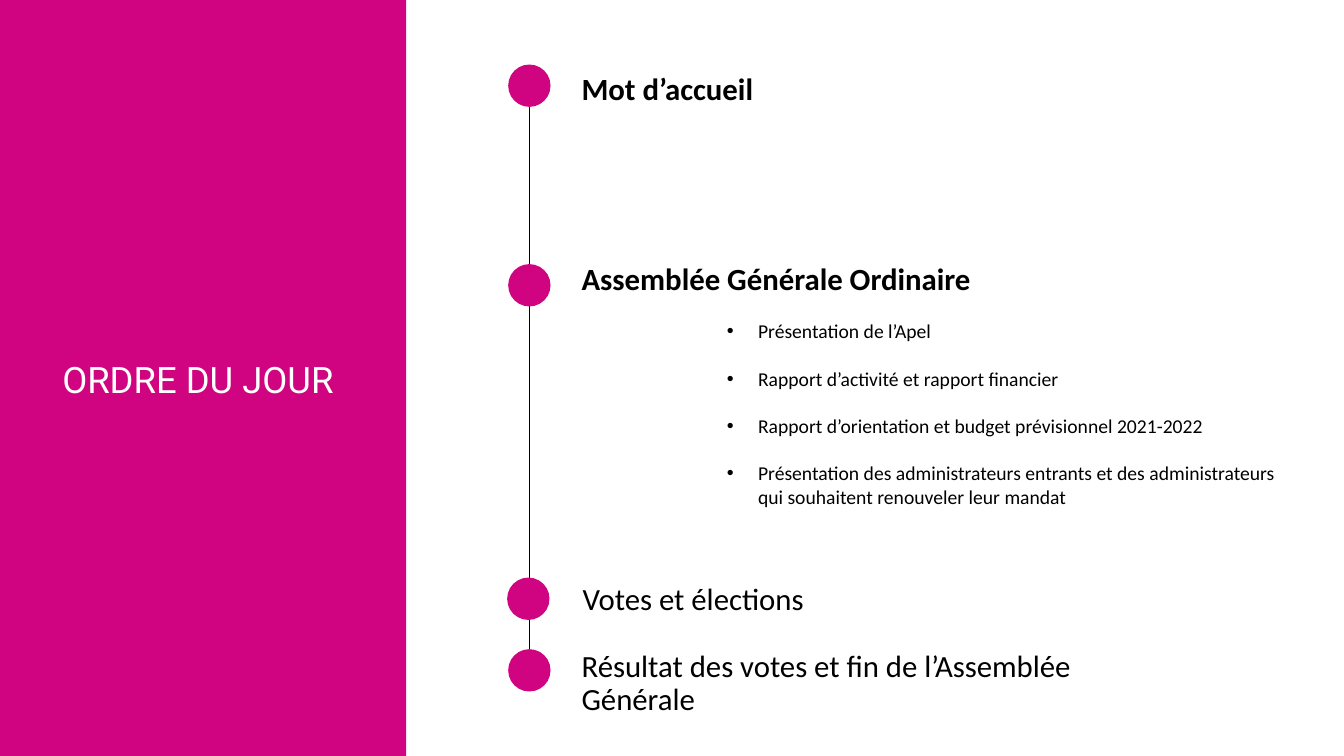
from lxml.etree import SubElement
from pptx import Presentation
from pptx.dml.color import RGBColor
from pptx.enum.shapes import MSO_CONNECTOR as Connector, MSO_SHAPE as Shape
from pptx.enum.text import MSO_ANCHOR as Anchor, MSO_AUTO_SIZE as AutoSize, PP_ALIGN as Align
from pptx.oxml.ns import qn
from pptx.util import Inches, Pt

MAGENTA = RGBColor(0xD0, 0x03, 0x80)
BLACK = RGBColor(0, 0, 0)
WHITE = RGBColor(255, 255, 255)

# dot left, dot top, text left, text top, text width, text height, bold, wording
STEPS = [
    (5.04, 0.64, 5.67, 0.67, 6.48, 0.45, True, "Mot d’accueil"),
    (5.04, 2.62, 5.67, 2.56, 6.48, 0.45, True, "Assemblée Générale Ordinaire"),
    (5.03, 5.73, 5.68, 5.71, 5.13, 0.5, False, "Votes et élections"),
    (5.04, 6.44, 5.67, 6.54, 5.72, 0.5, False,
     "Résultat des votes et fin de l’Assemblée Générale"),
]
ASSEMBLY_ITEMS = [
    "Présentation de l’Apel",
    "Rapport d’activité et rapport financier",
    "Rapport d’orientation et budget prévisionnel 2021-2022",
    "Présentation des administrateurs entrants et des administrateurs "
    "qui souhaitent renouveler leur mandat",
]
DOT_SIZE = 0.42


class AgendaPage:
    body_font = "Calibri"
    title_font = "Roboto"

    def __init__(self, deck):
        self.page = deck.slides.add_slide(deck.slide_layouts[5])

    def line(self, left, top, bottom):
        line = self.page.shapes.add_connector(
            Connector.STRAIGHT, Inches(left), Inches(top), Inches(left), Inches(bottom))
        line.line.color.rgb = BLACK
        line.line.width = Pt(0.5)
        SubElement(line.element.spPr, qn("a:effectLst"))

    def shape(self, kind, left, top, width, height):
        shape = self.page.shapes.add_shape(
            kind, Inches(left), Inches(top), Inches(width), Inches(height))
        shape.shadow.inherit = False
        shape.fill.solid()
        shape.fill.fore_color.rgb = MAGENTA
        shape.line.fill.background()

    def title(self, text, left, top, width, height):
        """Place the title above everything drawn so far."""
        title = self.page.shapes.title
        title.left, title.top = Inches(left), Inches(top)
        title.width, title.height = Inches(width), Inches(height)
        self.page.shapes.element.append(title.element)
        para = self.fill_frame(title.text_frame, [text], 26, self.title_font, WHITE)[0]
        para.alignment = Align.CENTER
        para.line_spacing = 0.9

    def text(self, lines, left, top, width, height, size, bold=False):
        box = self.page.shapes.add_textbox(
            Inches(left), Inches(top), Inches(width), Inches(height))
        return self.fill_frame(box.text_frame, lines, size, self.body_font, BLACK, bold)

    def heading(self, text, left, top, width, height, bold):
        self.text([text], left, top, width, height, 22, bold)[0].line_spacing = 0.9

    def bullets(self, lines, left, top, width, height):
        for index, para in enumerate(self.text(lines, left, top, width, height, 14)):
            if index:
                para.space_before = Pt(17)
            properties = para._p.get_or_add_pPr()
            properties.set("marL", str(Inches(0.31)))
            properties.set("indent", str(Inches(-0.31)))
            bullet_font = SubElement(properties, qn("a:buFont"), typeface="Arial")
            bullet_font.addnext(SubElement(properties, qn("a:buChar"), char="•"))
            self.set_font(para, 14, self.body_font, BLACK)

    def fill_frame(self, frame, lines, size, font, color, bold=False):
        """Fill a frame with one paragraph per line and return the paragraphs."""
        frame.text = "\n".join(lines)
        frame.word_wrap = True
        frame.auto_size = AutoSize.NONE
        frame.vertical_anchor = Anchor.MIDDLE
        for para in frame.paragraphs:
            if len(lines) == 1:
                self.set_font(para, size, font, color, bold)
        return frame.paragraphs

    @staticmethod
    def set_font(para, size, font, color, bold=False):
        para.font.size = Pt(size)
        para.font.name = font
        para.font.bold = bold
        para.font.color.rgb = color


def main():
    deck = Presentation()
    deck.slide_width, deck.slide_height = Inches(13.33), Inches(7.5)
    agenda = AgendaPage(deck)
    agenda.line(5.25, 0.97, 6.77)
    agenda.shape(Shape.RECTANGLE, 0, 0, 4.03, 7.5)
    agenda.title("ORDRE DU JOUR", 0.27, 3.54, 3.39, 0.5)
    for dot_left, dot_top, left, top, width, height, bold, wording in STEPS:
        agenda.shape(Shape.OVAL, dot_left, dot_top, DOT_SIZE, DOT_SIZE)
        agenda.heading(wording, left, top, width, height, bold)
    agenda.bullets(ASSEMBLY_ITEMS, 7.11, 2.77, 5.72, 2.67)
    deck.save("out.pptx")


if __name__ == "__main__":
    main()
